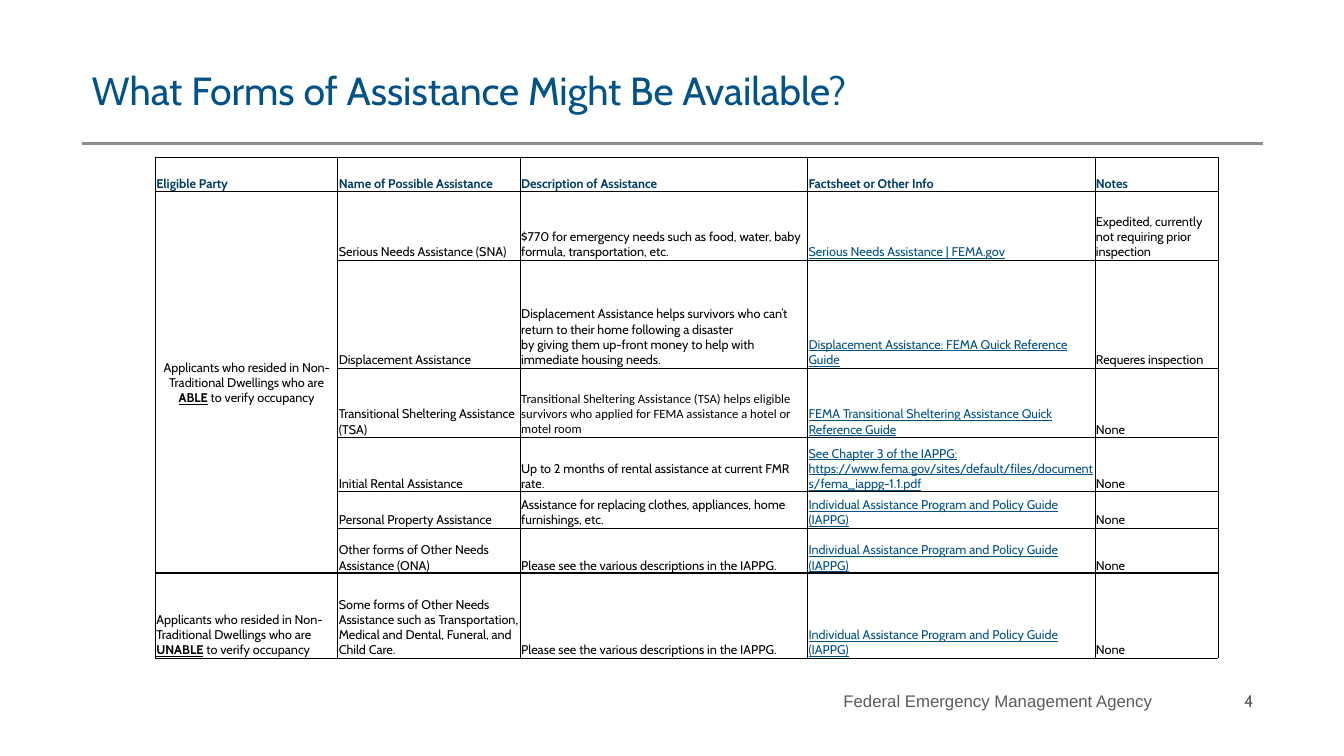
"""Build the slide listing forms of disaster assistance."""
from dataclasses import dataclass

from lxml.etree import SubElement
from pptx import Presentation
from pptx.dml.color import RGBColor as Rgb
from pptx.enum.shapes import MSO_CONNECTOR as Connector
from pptx.enum.text import MSO_ANCHOR as Anchor, PP_ALIGN as Align
from pptx.oxml.ns import qn
from pptx.util import Inches, Pt


@dataclass(frozen=True)
class Theme:
    font: str = "Cabin"
    footer_font: str = "Arial"
    detail_font: str = "Calibri"
    title: str = "005288"
    heading: str = "003E67"
    link: str = "005188"
    body: str = "000000"
    footer: str = "5A5B5D"
    rule: str = "8A8C8F"
    title_size: float = 28
    footer_size: float = 12
    table_size: float = 9
    rule_width: float = 2
    thin: float = 0.5
    thick: float = 1.5


IAPPG = "Individual Assistance Program and Policy Guide (IAPPG)"
SEE_IAPPG = "Please see the various descriptions in the IAPPG."
DWELLERS = "Applicants who resided in Non-Traditional Dwellings who are **{}** to verify occupancy"
COLUMN_WIDTHS = [1.81, 1.81, 2.85, 2.85, 1.22]
ROW_HEIGHTS = [0.34, 0.68, 1.07, 0.69, 0.54, 0.36, 0.45, 0.84]
ASSISTANCE = [
    ["Eligible Party", "Name of Possible Assistance", "Description of Assistance",
     "Factsheet or Other Info", "Notes"],
    [DWELLERS.format("ABLE"), "Serious Needs Assistance (SNA)",
     "$770 for emergency needs such as food, water, baby formula, transportation, etc.",
     "Serious Needs Assistance | FEMA.gov",
     "Expedited, currently not requiring prior inspection"],
    ["", "Displacement Assistance",
     "Displacement Assistance helps survivors who can’t return to their home following "
     "a disaster \nby giving them up-front money to help with immediate housing needs.",
     "Displacement Assistance: FEMA Quick Reference Guide", "Requeres inspection"],
    ["", "Transitional Sheltering Assistance (TSA)",
     "Transitional Sheltering Assistance (TSA) helps eligible survivors who applied for "
     "FEMA assistance a hotel or motel room",
     "FEMA Transitional Sheltering Assistance Quick Reference Guide", "None"],
    ["", "Initial Rental Assistance",
     "Up to 2 months of rental assistance at current FMR rate.",
     "See Chapter 3 of the IAPPG: "
     "https://www.fema.gov/sites/default/files/documents/fema_iappg-1.1.pdf", "None"],
    ["", "Personal Property Assistance",
     "Assistance for replacing clothes, appliances, home furnishings, etc.", IAPPG, "None"],
    ["", "Other forms of Other Needs Assistance (ONA)", SEE_IAPPG, IAPPG, "None"],
    [DWELLERS.format("UNABLE"),
     "Some forms of Other Needs Assistance such as Transportation, Medical and Dental, "
     "Funeral, and Child Care.", SEE_IAPPG, IAPPG, "None"],
]
LINK_COLUMN = 3
ABLE_FIRST, ABLE_LAST, TSA_ROW = 1, 6, 3


def write(frame, text, *, font, size, color, bold=False, underline=False, align=Align.LEFT):
    paragraph = frame.paragraphs[0]
    paragraph.alignment = align
    for part, phrase in enumerate(text.split("**")):
        stressed = part % 2 == 1
        for number, line in enumerate(phrase.split("\n")):
            if number:
                paragraph.add_line_break()
            run = paragraph.add_run()
            run.text = line
            run.font.name = font
            run.font.size = Pt(size)
            run.font.color.rgb = Rgb.from_string(color)
            run.font.bold = bold or stressed
            run.font.underline = underline or stressed


class AssistanceSlide:
    def __init__(self, slide, theme):
        self.slide = slide
        self.theme = theme

    def rule(self, left, right, y):
        divider = self.slide.shapes.add_connector(
            Connector.STRAIGHT, Inches(left), Inches(y), Inches(right), Inches(y))
        divider.line.color.rgb = Rgb.from_string(self.theme.rule)
        divider.line.width = Pt(self.theme.rule_width)
        SubElement(divider.element.spPr, qn("a:effectLst"))

    def label(self, text, left, top, width, height, **style):
        frame = self.slide.shapes.add_textbox(
            Inches(left), Inches(top), Inches(width), Inches(height)).text_frame
        frame.word_wrap = True
        frame.vertical_anchor = Anchor.MIDDLE
        write(frame, text, **style)

    def border(self, cell, **widths):
        properties = cell._tc.get_or_add_tcPr()
        for side in "LRTB":
            width = widths.get(side, self.theme.thin)
            edge = SubElement(properties, qn(f"a:ln{side}"), w=str(Pt(width)))
            fill = SubElement(edge, qn("a:solidFill"))
            SubElement(fill, qn("a:srgbClr"), val=self.theme.body)

    def cell_style(self, row, column):
        theme = self.theme
        style = dict(font=theme.font, size=theme.table_size, color=theme.body)
        if row == 0:
            style.update(color=theme.heading, bold=True)
        elif column == LINK_COLUMN:
            style.update(color=theme.link, underline=True)
        elif (row, column) == (TSA_ROW, 2):
            style.update(font=theme.detail_font)
        elif (row, column) == (ABLE_FIRST, 0):
            style.update(align=Align.CENTER)
        return style

    def table(self, left, top, rows, widths, heights):
        grid = self.slide.shapes.add_table(
            len(rows), len(widths), Inches(left), Inches(top),
            Inches(sum(widths)), Inches(sum(heights))).table
        grid.first_row = grid.horz_banding = False
        for column, width in zip(grid.columns, widths):
            column.width = Inches(width)
        for row, height in zip(grid.rows, heights):
            row.height = Inches(height)
        grid.cell(ABLE_FIRST, 0).merge(grid.cell(ABLE_LAST, 0))
        for r, row in enumerate(rows):
            for c, text in enumerate(row):
                cell = grid.cell(r, c)
                cell.margin_left = cell.margin_right = cell.margin_top = Inches(0.01)
                cell.margin_bottom = 0
                cell.vertical_anchor = Anchor.MIDDLE if cell.is_merge_origin else Anchor.BOTTOM
                above_split = r == ABLE_LAST or cell.is_merge_origin
                self.border(cell,
                            T=self.theme.thick if r == ABLE_LAST + 1 else self.theme.thin,
                            B=self.theme.thick if above_split else self.theme.thin)
                cell.fill.background()
                if text:
                    write(cell.text_frame, text, **self.cell_style(r, c))


def main():
    deck = Presentation()
    deck.slide_width, deck.slide_height = Inches(13.33), Inches(7.5)
    theme = Theme()
    page = AssistanceSlide(deck.slides.add_slide(deck.slide_layouts[6]), theme)
    footer = dict(size=theme.footer_size, color=theme.footer, align=Align.RIGHT)
    page.rule(0.81, 12.53, 1.42)
    page.label("Federal Emergency Management Agency", 6.67, 6.75, 4.86, 0.4,
               font=theme.footer_font, **footer)
    page.label("What Forms of Assistance Might Be Available?", 0.81, 0.49, 11.72, 0.81,
               font=theme.font, size=theme.title_size, color=theme.title)
    page.label("4", 11.53, 6.75, 1, 0.4, font=theme.font, **footer)
    page.table(1.54, 1.56, ASSISTANCE, COLUMN_WIDTHS, ROW_HEIGHTS)
    deck.save("out.pptx")


if __name__ == "__main__":
    main()
